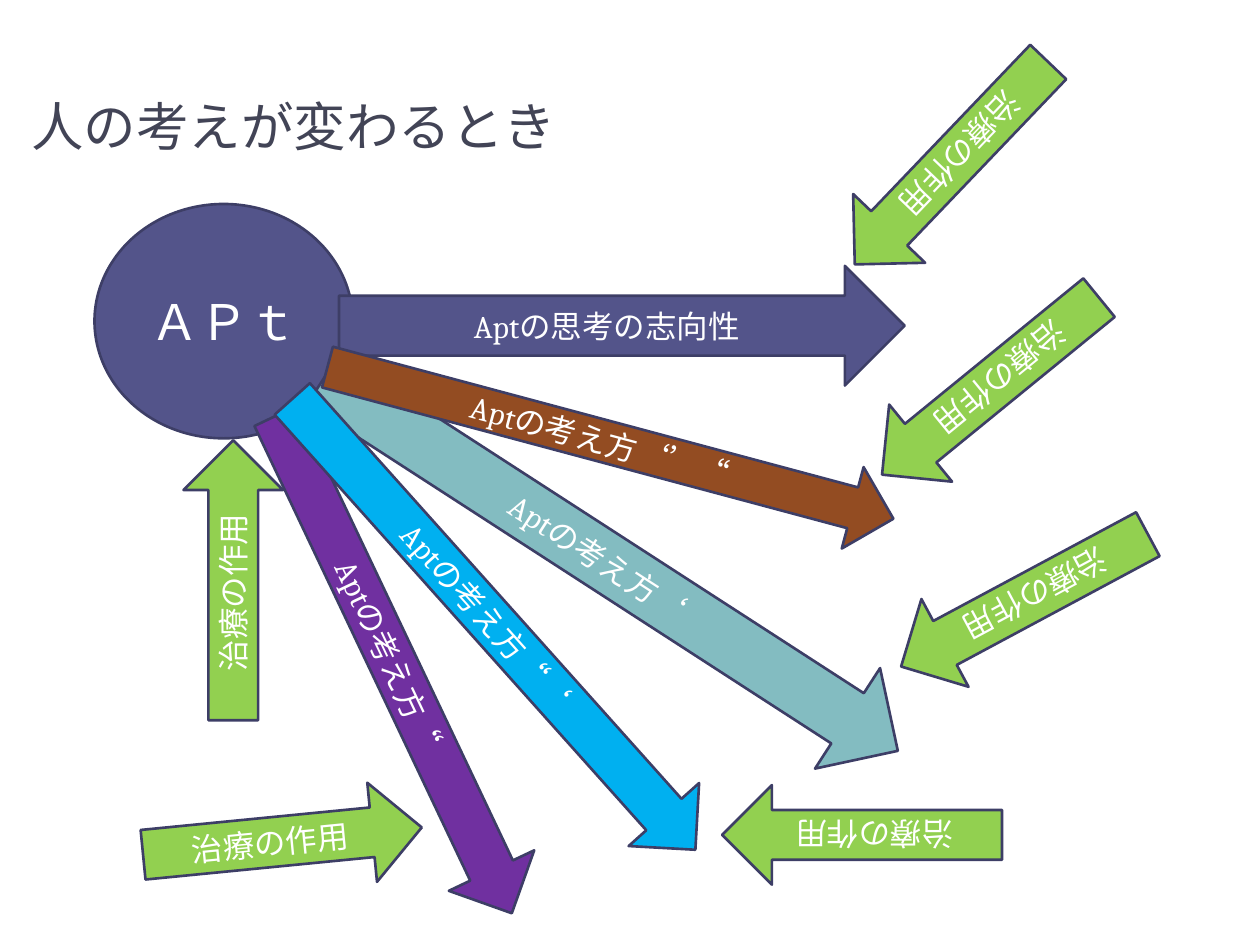
"""Build a slide of thought arrows being turned by the effect of treatment."""
import pptx
import pptx.util
import pptx.dml.color
import pptx.enum.shapes
import pptx.enum.text

Pt = pptx.util.Pt
SHAPE = pptx.enum.shapes.MSO_SHAPE
ALIGN = pptx.enum.text.PP_ALIGN
MIDDLE = pptx.enum.text.MSO_ANCHOR.MIDDLE

COLORS = {
    "title": "424456",
    "text": "FFFFFF",
    "outline": "3D3E66",
    "indigo": "53548A",
    "teal": "83BCC1",
    "green": "92D050",
    "purple": "7030A0",
    "blue": "00B0F0",
    "brown": "934C22",
}
TITLE = "人の考えが変わるとき"
PERSON = ("ＡＰｔ", "indigo", (54, 116.6, 147.6, 133.9))
THOUGHTS = [
    ("Aptの思考の志向性", "indigo", (193.7, 151.9, 323.3, 68.4), 0),
    ("Aptの考え方‘", "teal", (153.4, 288.7, 391, 68.4), 32.9),
    ("Aptの考え方“", "purple", (67.7, 352.8, 314.6, 54), 64.6),
    ("Aptの考え方“‘", "blue", (109.4, 329.8, 345.6, 54), 48.2),
    ("Aptの考え方‘’“", "brown", (181.4, 229, 334.8, 48.2), 15),
]
TREATMENT = "治療の作用"
TREATMENT_SIZE = (160, 56.9)
TREATMENTS = [
    (53.3, 303.1, 270),
    (81.4, 452.2, 354.4),
    (412.6, 448.6, 180),
    (505.4, 314.6, 151.8),
    (486, 192.2, 140.8),
    (463.7, 64.8, 133.7),
]


def rgb(name):
    return pptx.dml.color.RGBColor.from_string(COLORS[name])


def write(sp, text, size, font, color, align):
    tf = sp.text_frame
    tf.word_wrap = True
    tf.auto_size = pptx.enum.text.MSO_AUTO_SIZE.NONE
    tf.vertical_anchor = MIDDLE
    p = tf.paragraphs[0]
    p.alignment = align
    r = p.add_run()
    r.text = text
    r.font.size = Pt(size)
    r.font.name = font
    r.font.color.rgb = rgb(color)


def add_label(s, kind, text, fill, box, rotation=0, size=18):
    sp = s.shapes.add_shape(kind, *map(Pt, box))
    sp.rotation = rotation
    sp.shadow.inherit = False
    sp.fill.solid()
    sp.fill.fore_color.rgb = rgb(fill)
    sp.line.color.rgb = rgb("outline")
    sp.line.width = Pt(1.5)
    write(sp, text, size, "Cambria", "text", ALIGN.CENTER)


def main():
    prs = pptx.Presentation()
    prs.slide_width, prs.slide_height = Pt(720), Pt(540)
    s = prs.slides.add_slide(prs.slide_layouts[5])

    title = s.shapes.title
    title.left, title.top, title.width, title.height = map(Pt, (10.8, 29.5, 648, 84.2))
    write(title, TITLE, 30, "Roboto", "title", ALIGN.LEFT)

    add_label(s, SHAPE.OVAL, *PERSON, size=28)
    treatments = [
        (TREATMENT, "green", (left, top, *TREATMENT_SIZE), rotation)
        for left, top, rotation in TREATMENTS
    ]
    arrows = THOUGHTS[:2] + treatments[:1] + THOUGHTS[2:] + treatments[1:]
    for arrow in arrows:
        add_label(s, SHAPE.RIGHT_ARROW, *arrow)

    prs.save("out.pptx")


if __name__ == "__main__":
    main()
